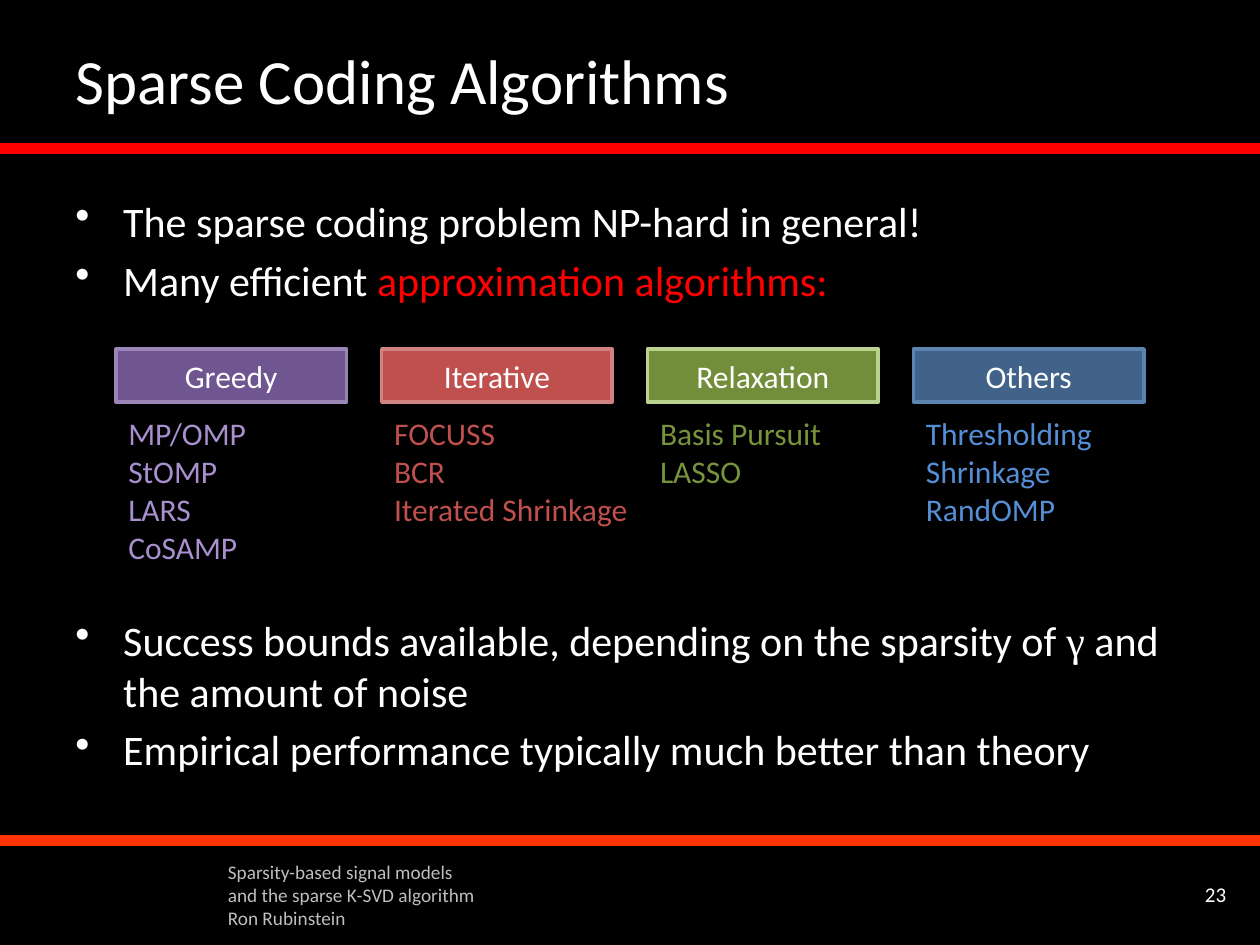
import pptx
import pptx.util
import pptx.dml.color
import pptx.enum.shapes
import pptx.enum.text
import pptx.oxml.ns
import lxml.etree

Inches = pptx.util.Inches
Pt = pptx.util.Pt
ALIGN = pptx.enum.text.PP_ALIGN
ANCHOR = pptx.enum.text.MSO_ANCHOR
WHITE = "FFFFFF"
GROUPS = [
    ("Greedy", "705690", "9B84B6", "A88FCD",
     ["MP/OMP", "StOMP", "LARS", "CoSAMP"]),
    ("Iterative", "C0504D", "D28280", "C0504D",
     ["FOCUSS", "BCR", "Iterated Shrinkage"]),
    ("Relaxation", "728E3A", "BBD18F", "77933C",
     ["Basis Pursuit", "LASSO"]),
    ("Others", "416389", "5B84B1", "558ED5",
     ["Thresholding", "Shrinkage", "RandOMP"]),
]


def rgb(code):
    """Turn a hex string into a colour."""
    return pptx.dml.color.RGBColor.from_string(code)


def style(font, size, color, name="Calibri"):
    """Set the size, colour and typeface of a font."""
    font.size = Pt(size)
    font.name = name
    font.color.rgb = rgb(color)


def add_rule(slide, top, color):
    """Draw a thick line across the slide."""
    rule = slide.shapes.add_connector(
        pptx.enum.shapes.MSO_CONNECTOR.STRAIGHT,
        Inches(0), Inches(top), Inches(10), Inches(top))
    rule.line.color.rgb = rgb(color)
    rule.line.width = Pt(6)
    lxml.etree.SubElement(rule._element.spPr, pptx.oxml.ns.qn("a:effectLst"))


def add_text(slide, box, lines, size, color, align=ALIGN.LEFT, wrap=True):
    """Add a text box with one paragraph per line."""
    frame = slide.shapes.add_textbox(*map(Inches, box)).text_frame
    frame.word_wrap = wrap
    frame.text = "\n".join(lines)
    for para in frame.paragraphs:
        para.alignment = align
        style(para.font, size, color)


def add_bullet(para):
    """Give a paragraph a hanging bullet."""
    props = para._p.get_or_add_pPr()
    props.set("marL", str(Inches(0.38)))
    props.set("indent", str(Inches(-0.38)))
    mark = lxml.etree.SubElement(props, pptx.oxml.ns.qn("a:buChar"))
    mark.set("char", "•")


def add_list(slide, box, items):
    """Add bulleted items, each a list of text, colour and typeface runs."""
    frame = slide.shapes.add_textbox(*map(Inches, box)).text_frame
    frame.word_wrap = True
    for pos, item in enumerate(items):
        para = frame.add_paragraph() if pos else frame.paragraphs[0]
        add_bullet(para)
        para.space_before = Pt(4.8 if pos else 0)
        for text, color, name in item:
            run = para.add_run()
            run.text = text
            style(run.font, 24, color, name)


def add_head(slide, left, text, fill, edge):
    """Add the filled heading box of a group."""
    head = slide.shapes.add_shape(
        pptx.enum.shapes.MSO_SHAPE.RECTANGLE,
        Inches(left), Inches(2.77), Inches(1.83), Inches(0.42))
    head.shadow.inherit = False
    head.fill.solid()
    head.fill.fore_color.rgb = rgb(fill)
    head.line.color.rgb = rgb(edge)
    head.line.width = Pt(2)
    frame = head.text_frame
    frame.vertical_anchor = ANCHOR.MIDDLE
    frame.text = text
    para = frame.paragraphs[0]
    para.alignment = ALIGN.CENTER
    style(para.font, 18, WHITE)


def set_title(slide, text):
    """Place and format the title."""
    title = slide.shapes.title
    title.left, title.top = Inches(0.5), Inches(0.17)
    title.width, title.height = Inches(9), Inches(0.92)
    frame = title.text_frame
    frame.text = text
    frame.vertical_anchor = ANCHOR.MIDDLE
    para = frame.paragraphs[0]
    para.alignment = ALIGN.LEFT
    style(para.font, 36, WHITE)


def main():
    """Build and save the slide."""
    deck = pptx.Presentation()
    deck.slide_width, deck.slide_height = Inches(10), Inches(7.5)
    slide = deck.slides.add_slide(deck.slide_layouts[5])
    slide.background.fill.solid()
    slide.background.fill.fore_color.rgb = rgb("000000")

    add_rule(slide, 6.67, "FF3300")
    add_rule(slide, 1.18, "FF0000")
    add_text(slide, (1.71, 6.78, 2.17, 0.66),
             ["Sparsity-based signal models and the sparse K-SVD algorithm",
              "Ron Rubinstein"], 11, "BFBFBF")
    add_text(slide, (8.83, 6.95, 1, 0.3), ["23"], 12, WHITE, ALIGN.RIGHT)
    set_title(slide, "Sparse Coding Algorithms")

    add_list(slide, (0.5, 1.5, 9, 1.08), [
        [("The sparse coding problem NP-hard in general!", WHITE, "Calibri")],
        [("Many efficient ", WHITE, "Calibri"),
         ("approximation algorithms:", "FF0000", "Calibri")],
    ])
    for col, (name, fill, edge, color, lines) in enumerate(GROUPS):
        left = 0.92 + 2.11 * col
        add_head(slide, left, name, fill, edge)
        add_text(slide, (left, 3.24, 2.07, 0.1 + 0.3 * len(lines)),
                 lines, 18, color)
    add_list(slide, (0.5, 4.83, 9, 1.58), [
        [("Success bounds available, depending on the sparsity of ",
          WHITE, "Calibri"),
         ("γ", WHITE, "Times New Roman"),
         (" and the amount of noise", WHITE, "Calibri")],
        [("Empirical performance typically much better than theory",
          WHITE, "Calibri")],
    ])
    deck.save("out.pptx")


if __name__ == "__main__":
    main()
